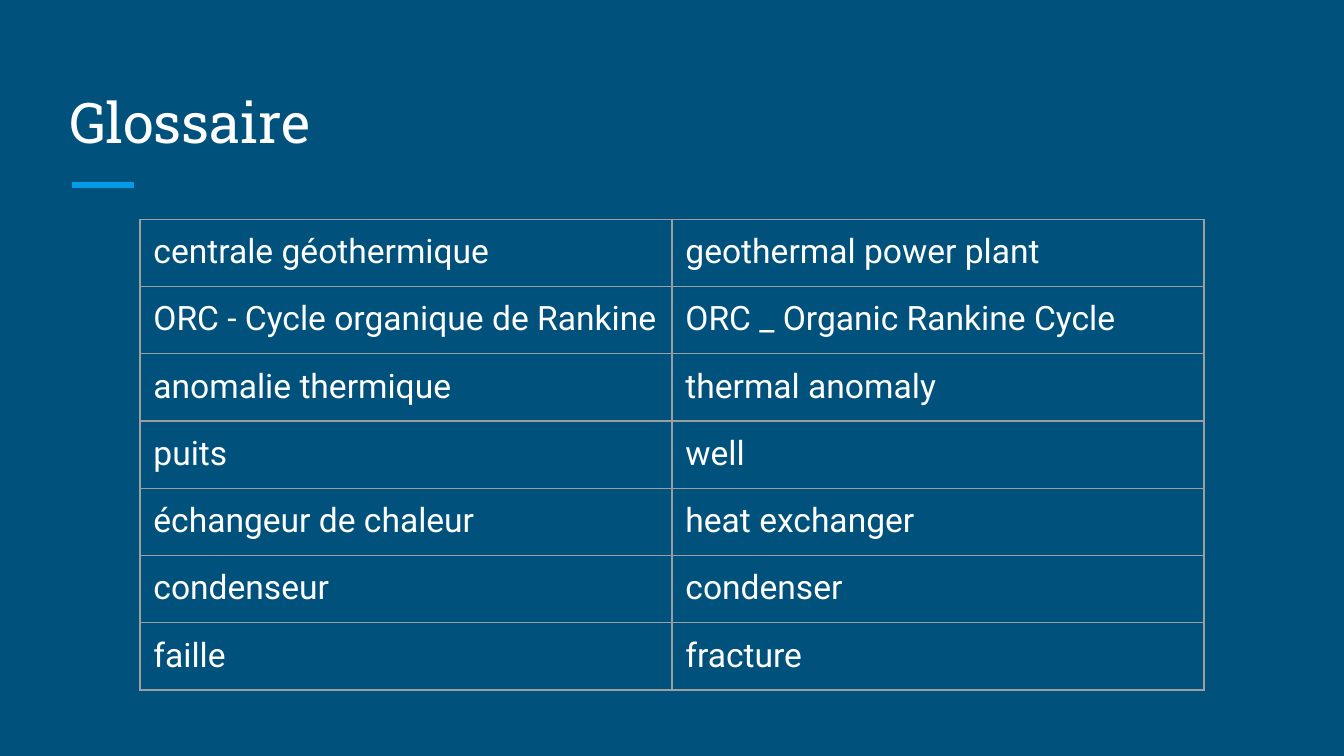
from lxml import etree
from pptx import Presentation
from pptx.dml.color import RGBColor
from pptx.enum.shapes import MSO_CONNECTOR
from pptx.enum.text import MSO_ANCHOR
from pptx.oxml.ns import qn
from pptx.util import Pt

STRAIGHT = MSO_CONNECTOR.STRAIGHT
BOTTOM = MSO_ANCHOR.BOTTOM

NAVY = RGBColor(0x00, 0x51, 0x7C)
SKY = RGBColor(0x03, 0x9B, 0xE5)
GREY = RGBColor(0x9E, 0x9E, 0x9E)
WHITE = RGBColor(0xFF, 0xFF, 0xFF)

INSET = Pt(7.2)
TERMS = [
    ("centrale géothermique", "geothermal power plant"),
    ("ORC - Cycle organique de Rankine", "ORC _ Organic Rankine Cycle"),
    ("anomalie thermique", "thermal anomaly"),
    ("puits", "well"),
    ("échangeur de chaleur", "heat exchanger"),
    ("condenseur", "condenser"),
    ("faille", "fracture"),
]


def set_text(para, text, font, size):
    """Write white text into a paragraph."""
    para.text = text
    para.font.name = font
    para.font.size = Pt(size)
    para.font.color.rgb = WHITE


def set_insets(target):
    """Give a text frame or cell the same margin on every side."""
    target.margin_left = target.margin_right = INSET
    target.margin_top = target.margin_bottom = INSET


def add_title(page, text, left, top, width, height):
    """Place the heading and the short accent rule below it."""
    box = page.shapes.add_textbox(Pt(left), Pt(top), Pt(width), Pt(height))
    frame = box.text_frame
    frame.word_wrap = True
    frame.vertical_anchor = BOTTOM
    set_insets(frame)
    set_text(frame.paragraphs[0], text, "Roboto Slab", 30)

    rule_left, rule_top = Pt(left + 8.6), Pt(top + height + 9.2)
    rule = page.shapes.add_connector(
        STRAIGHT, rule_left, rule_top, rule_left + Pt(33.4), rule_top)
    rule.line.color.rgb = SKY
    rule.line.width = Pt(3)
    etree.SubElement(rule._element.spPr, qn("a:effectLst"))


def add_borders(cell):
    """Draw a thin grey line on each side of a cell."""
    properties = cell._tc.get_or_add_tcPr()
    for position, side in enumerate(("a:lnL", "a:lnR", "a:lnT", "a:lnB")):
        line = etree.Element(qn(side), w=str(Pt(0.75)))
        fill = etree.SubElement(line, qn("a:solidFill"))
        etree.SubElement(fill, qn("a:srgbClr"), val=str(GREY))
        properties.insert(position, line)


def add_glossary(page, terms, left, top, width, height):
    """Place the table of French terms and their English equivalents."""
    table = page.shapes.add_table(
        len(terms), 2, Pt(left), Pt(top), Pt(width), Pt(height)).table
    table.first_row = False
    table.horz_banding = False
    for row, pair in enumerate(terms):
        for column, term in enumerate(pair):
            cell = table.cell(row, column)
            cell.fill.background()
            set_insets(cell)
            set_text(cell.text_frame.paragraphs[0], term, "Roboto", 18)
            add_borders(cell)


def main():
    """Build the glossary deck."""
    deck = Presentation()
    deck.slide_width, deck.slide_height = Pt(720), Pt(405)
    page = deck.slides.add_slide(deck.slide_layouts[6])
    page.background.fill.solid()
    page.background.fill.fore_color.rgb = NAVY
    add_title(page, "Glossaire", 30, 36, 659, 54)
    add_glossary(page, TERMS, 75, 117.4, 570, 30.24 * len(TERMS))
    deck.save("out.pptx")


if __name__ == "__main__":
    main()
